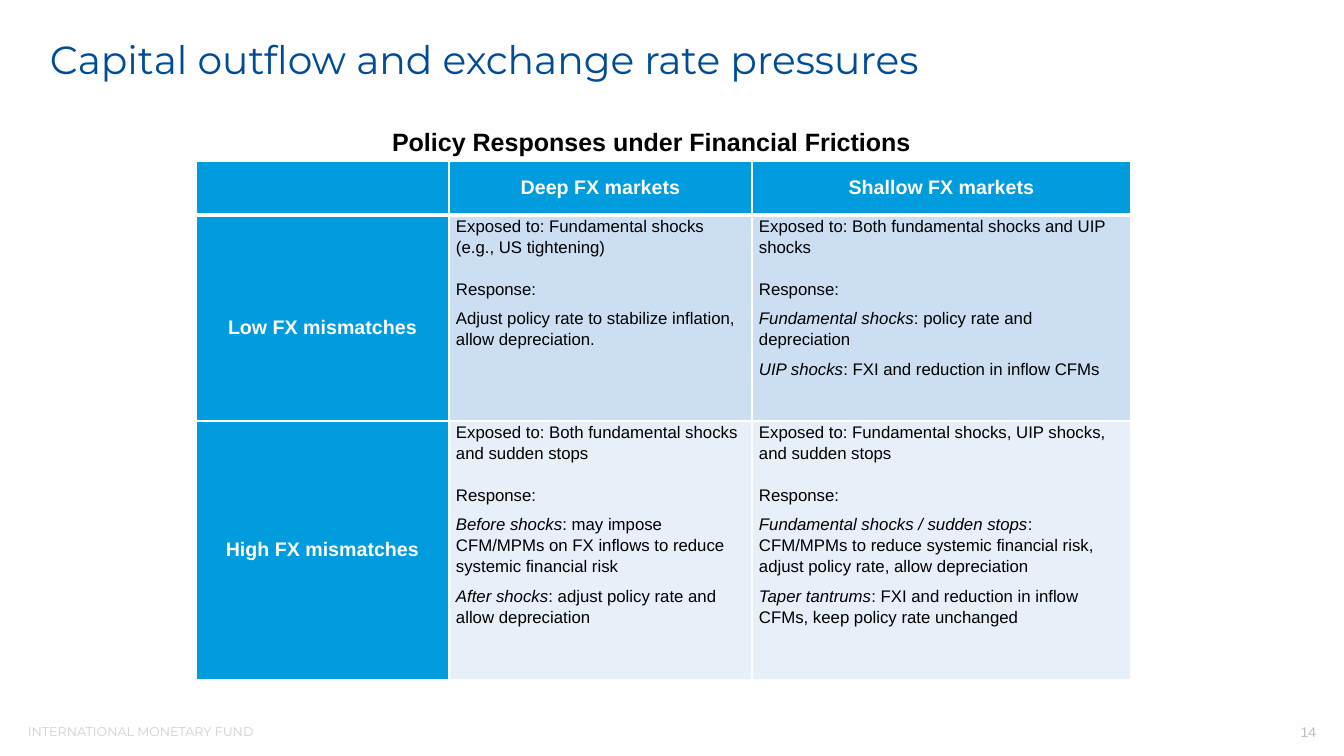
from lxml import etree
from pptx import Presentation
from pptx import util as u
from pptx.dml.color import RGBColor
from pptx.enum import text as t
from pptx.oxml.ns import qn

PX = 914400 / 100.8
HUES = {"back": "FEFEFE", "title": "004C97", "head": "009CDE", "low": "CCDEF2",
        "high": "E7EFF9", "ink": "000000", "page": "BEBEBE", "foot": "D0D0D0"}
LEFT, MID, RIGHT = t.PP_ALIGN.LEFT, t.PP_ALIGN.CENTER, t.PP_ALIGN.RIGHT

COLS = [253, 303, 379]
ROWS = [54, 206, 259]
HEADS = ["", "Deep FX markets", "Shallow FX markets"]
# Each body row: label, its drop, fill, then per market: exposure and responses
BODY = [
    ("Low FX mismatches", 21, "low", [
        ("Fundamental shocks (e.g., US tightening)",
         [("", "Adjust policy rate to stabilize inflation, allow depreciation.")]),
        ("Both fundamental shocks and UIP shocks",
         [("Fundamental shocks", ": policy rate and depreciation"),
          ("UIP shocks", ": FXI and reduction in inflow CFMs")])]),
    ("High FX mismatches", 0, "high", [
        ("Both fundamental shocks and sudden stops",
         [("Before shocks", ": may impose CFM/MPMs on FX inflows to reduce "
                            "systemic financial risk"),
          ("After shocks", ": adjust policy rate and allow depreciation")]),
        ("Fundamental shocks, UIP shocks, and sudden stops",
         [("Fundamental shocks / sudden stops",
           ": CFM/MPMs to reduce systemic financial risk, adjust policy rate, "
           "allow depreciation"),
          ("Taper tantrums",
           ": FXI and reduction in inflow CFMs, keep policy rate unchanged")])]),
]


def px(n):
    return u.Emu(round(n * PX))


def color(name):
    return RGBColor.from_string(HUES[name])


def style(para, size, hue, face="Arial", bold=False, align=LEFT):
    para.alignment = align
    font = para.font
    font.size, font.name, font.bold = u.Pt(size), face, bold
    font.color.rgb = color(hue)


def label(slide, box, words, size, hue, pads=None, anchor=t.MSO_ANCHOR.TOP, **look):
    frame = slide.shapes.add_textbox(*map(px, box)).text_frame
    frame.word_wrap = True
    frame.vertical_anchor = anchor
    if pads:
        (frame.margin_left, frame.margin_top,
         frame.margin_right, frame.margin_bottom) = map(px, pads)
    para = frame.paragraphs[0]
    para.text = words
    style(para, size, hue, **look)


def edge(cell, side, width):
    line = etree.SubElement(cell._tc.get_or_add_tcPr(), qn("a:ln" + side),
                            w=str(u.Pt(width)))
    fill = etree.SubElement(line, qn("a:solidFill"))
    etree.SubElement(fill, qn("a:srgbClr"), val=HUES["back"])


def dress(cell, hue, top=1, bottom=1):
    for side, width in (("L", 1), ("R", 1), ("T", top), ("B", bottom)):
        edge(cell, side, width)
    cell.fill.solid()
    cell.fill.fore_color.rgb = color(hue)
    cell.margin_left = cell.margin_right = px(7)
    cell.margin_top = cell.margin_bottom = 0


def name(cell, words, drop=0):
    cell.vertical_anchor = t.MSO_ANCHOR.MIDDLE
    cell.margin_top = px(drop)
    para = cell.text_frame.paragraphs[0]
    para.text = words
    para.line_spacing = u.Pt(15)
    style(para, 14, "back", bold=True, align=MID)


def policy(cell, risk, moves):
    lines = [("", "Exposed to: " + risk, 0), ("", "Response:", 15)]
    lines += [(lead, rest, 6) for lead, rest in moves]
    frame = cell.text_frame
    for i, (lead, rest, gap) in enumerate(lines):
        para = frame.add_paragraph() if i else frame.paragraphs[0]
        para.line_spacing = u.Pt(15)
        para.space_before = u.Pt(gap)
        style(para, 12, "ink")
        if lead:
            run = para.add_run()
            run.text = lead
            run.font.italic = True
        para.add_run().text = rest


def matrix(slide, left, top):
    grid = slide.shapes.add_table(len(ROWS), len(COLS), px(left), px(top),
                                  px(sum(COLS)), px(sum(ROWS))).table
    for col, wide in zip(grid.columns, COLS):
        col.width = px(wide)
    for row, high in zip(grid.rows, ROWS):
        row.height = px(high)
    # Header row
    for c, words in enumerate(HEADS):
        dress(grid.cell(0, c), "head", bottom=3)
        if words:
            name(grid.cell(0, c), words)
    # Mismatch rows
    for r, (words, drop, hue, cells) in enumerate(BODY, 1):
        rule = 3 if r == 1 else 1
        dress(grid.cell(r, 0), "head", top=rule)
        name(grid.cell(r, 0), words, drop)
        for c, (risk, moves) in enumerate(cells, 1):
            dress(grid.cell(r, c), hue, top=rule)
            policy(grid.cell(r, c), risk, moves)


def main():
    deck = Presentation()
    deck.slide_width, deck.slide_height = px(1344), px(756)
    slide = deck.slides.add_slide(deck.slide_layouts[6])
    slide.background.fill.solid()
    slide.background.fill.fore_color.rgb = color("back")

    # Footer and page number
    label(slide, (18, 717, 400, 27), "INTERNATIONAL MONETARY FUND", 9, "foot",
          anchor=t.MSO_ANCHOR.BOTTOM, face="Montserrat")
    label(slide, (1193, 718, 133, 27), "14", 10, "page",
          anchor=t.MSO_ANCHOR.BOTTOM, align=RIGHT)

    # Title and table heading
    label(slide, (40, 30, 1142, 57), "Capital outflow and exchange rate pressures",
          28, "title", face="Montserrat")
    label(slide, (165, 111, 973, 40), "Policy Responses under Financial Frictions",
          17.9, "ink", pads=(0, 15, 0, 0), bold=True, align=MID)

    # Policy table
    matrix(slide, 196, 161)
    deck.save("out.pptx")


if __name__ == "__main__":
    main()
